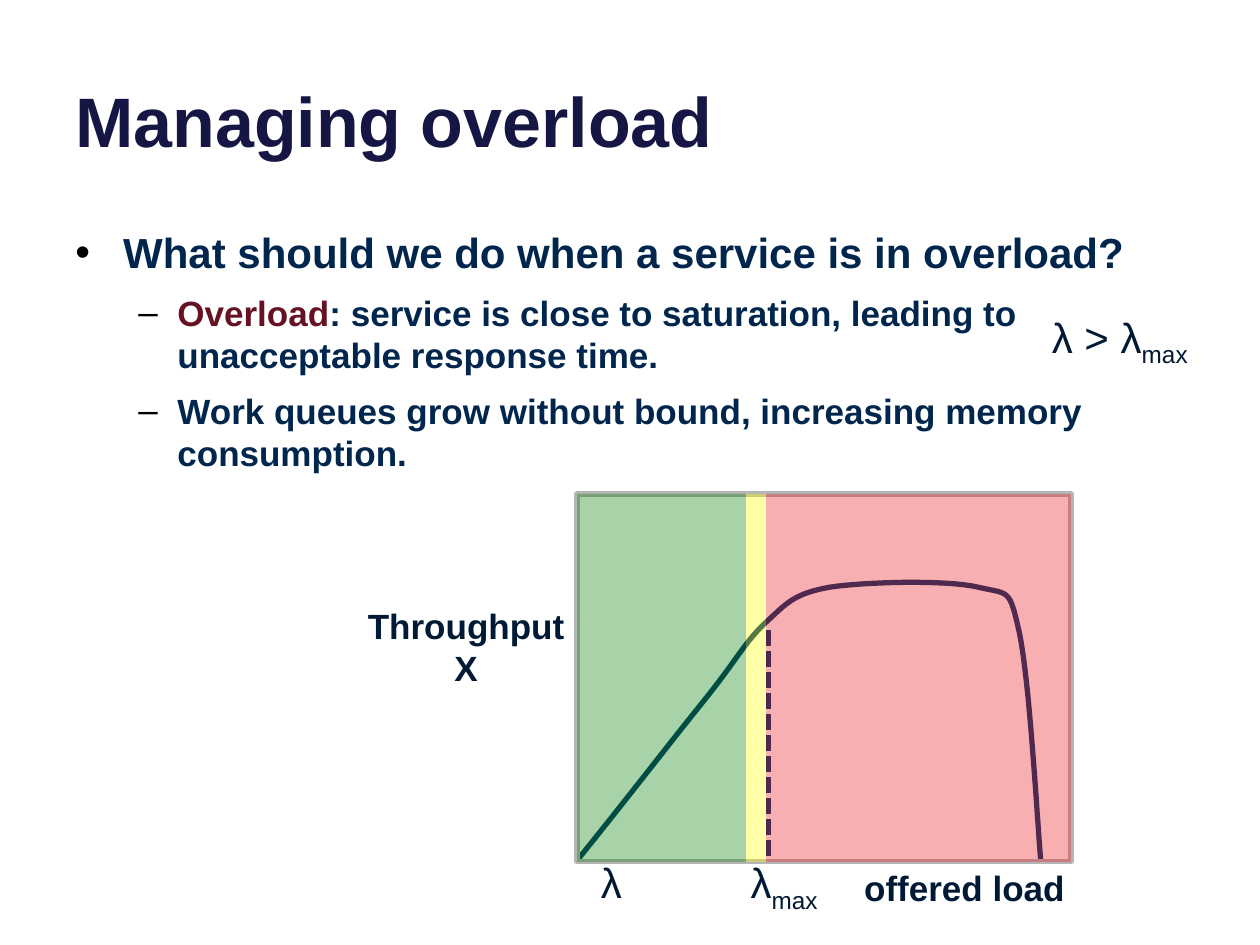
"""Build the slide on managing overload with its throughput curve."""
from dataclasses import dataclass
from typing import NamedTuple

from lxml.etree import SubElement
from pptx import Presentation
from pptx.dml.color import RGBColor
from pptx.enum.dml import MSO_LINE
from pptx.enum.shapes import MSO_CONNECTOR, MSO_SHAPE
from pptx.enum.text import MSO_ANCHOR as Anchor, MSO_AUTO_SIZE as AutoSize, PP_ALIGN as Align
from pptx.oxml.ns import qn
from pptx.util import Inches, Pt


@dataclass(frozen=True)
class Theme:
    font: str = "Arial"
    title: str = "161645"
    body: str = "00264D"
    accent: str = "651222"
    label: str = "001934"
    bullet: str = "000000"
    curve: str = "003367"
    frame: str = "B5B5B5"
    normal: str = "008000"
    limit: str = "FFFF00"
    overload: str = "E8161F"
    zone_alpha: int = 34
    title_size: int = 40
    large: int = 24
    small: int = 20
    line: int = 3


class Box(NamedTuple):
    left: float
    top: float
    width: float
    height: float


class Span(NamedTuple):
    text: str
    color: str
    subscript: bool = False


class Bullet(NamedTuple):
    mark: str
    margin: float
    hanging: float
    before: int


class Para(NamedTuple):
    spans: list[Span]
    size: int
    bullet: Bullet | None = None


class Zone(NamedTuple):
    left: float
    right: float
    color: str


THEME = Theme()
PLOT = Box(4.58, 3.92, 3.92, 2.92)
NORMAL_END, LIMIT_END = 5.92, 6.08
TOPIC = Bullet("•", 0.38, 0.38, 9)
DETAIL = Bullet("–", 0.81, 0.31, 8)
CURVE = [
    (4.58, 6.83), (4.96, 6.36), (5.33, 5.88), (5.58, 5.57),
    (5.84, 5.25), (5.92, 5.08), (6.09, 4.93),
    (6.25, 4.78), (6.31, 4.71), (6.59, 4.66),
    (6.86, 4.62), (7.5, 4.6), (7.76, 4.66),
    (8.01, 4.72), (8.01, 4.66), (8.09, 5.02),
    (8.17, 5.39), (8.23, 6.47), (8.26, 6.83),
]
ZONES = [
    Zone(LIMIT_END, PLOT.left + PLOT.width, THEME.overload),
    Zone(PLOT.left, NORMAL_END, THEME.normal),
    Zone(NORMAL_END, LIMIT_END, THEME.limit),
]


def rgb(color: str) -> RGBColor:
    """Turn a hex string into a colour."""
    return RGBColor.from_string(color)


def set_bullet(paragraph, bullet: Bullet) -> None:
    """Give a paragraph its bullet, hanging indent and space before."""
    paragraph.space_before = Pt(bullet.before)
    props = paragraph._p.get_or_add_pPr()
    props.set("marL", str(Inches(bullet.margin)))
    props.set("indent", str(-Inches(bullet.hanging)))
    color = SubElement(props, qn("a:buClr"))
    SubElement(color, qn("a:srgbClr"), val=THEME.bullet)
    SubElement(props, qn("a:buFont"), typeface=THEME.font)
    SubElement(props, qn("a:buChar"), char=bullet.mark)


def add_text(slide, box: Box, paras: list[Para], *, bold: bool = False, wrap: bool = False,
             align: Align = Align.LEFT, anchor: Anchor = Anchor.TOP) -> None:
    """Add a text box with formatted paragraphs."""
    frame = slide.shapes.add_textbox(*map(Inches, box)).text_frame
    frame.word_wrap = wrap
    frame.auto_size = AutoSize.NONE if wrap else AutoSize.SHAPE_TO_FIT_TEXT
    frame.vertical_anchor = anchor
    for index, para in enumerate(paras):
        paragraph = frame.add_paragraph() if index else frame.paragraphs[0]
        paragraph.alignment = align
        if para.bullet:
            set_bullet(paragraph, para.bullet)
        for span in para.spans:
            run = paragraph.add_run()
            run.text = span.text
            run.font.name = THEME.font
            run.font.size = Pt(para.size)
            run.font.bold = bold
            run.font.color.rgb = rgb(span.color)
            if span.subscript:
                run._r.get_or_add_rPr().set("baseline", "-25000")


def add_label(slide, box: Box, *lines: str) -> None:
    """Add a bold centred axis label."""
    paras = [Para([Span(line, THEME.label)], THEME.small) for line in lines]
    add_text(slide, box, paras, bold=True, align=Align.CENTER)


def add_symbol(slide, box: Box, symbol: str, subscript: str = "") -> None:
    """Add a load symbol with an optional subscript."""
    spans = [Span(symbol, THEME.label)]
    if subscript:
        spans.append(Span(subscript, THEME.label, True))
    add_text(slide, box, [Para(spans, THEME.large)])


def bezier_points(nodes: list[tuple[float, float]], steps: int = 16) -> list[tuple[float, float]]:
    """Sample a chain of cubic curves that share their end nodes."""
    points = [nodes[0]]
    for start in range(0, len(nodes) - 1, 3):
        segment = nodes[start:start + 4]
        for step in range(1, steps + 1):
            t = step / steps
            weights = ((1 - t) ** 3, 3 * t * (1 - t) ** 2, 3 * t * t * (1 - t), t ** 3)
            points.append(tuple(sum(w * node[axis] for w, node in zip(weights, segment))
                                for axis in (0, 1)))
    return points


def add_curve(slide, nodes: list[tuple[float, float]]) -> None:
    """Draw the smooth throughput curve."""
    first, *rest = [(Inches(x), Inches(y)) for x, y in bezier_points(nodes)]
    builder = slide.shapes.build_freeform(*first)
    builder.add_line_segments(rest, close=False)
    curve = builder.convert_to_shape()
    curve.shadow.inherit = False
    curve.fill.background()
    curve.line.color.rgb = rgb(THEME.curve)
    curve.line.width = Pt(THEME.line)


def add_rect(slide, box: Box, *, fill: str = "", line: str = "") -> None:
    """Draw a rectangle with a translucent fill or an outline."""
    rect = slide.shapes.add_shape(MSO_SHAPE.RECTANGLE, *map(Inches, box))
    rect.shadow.inherit = False
    if fill:
        rect.fill.solid()
        rect.fill.fore_color.rgb = rgb(fill)
        color = rect._element.spPr.find(qn("a:solidFill")).find(qn("a:srgbClr"))
        SubElement(color, qn("a:alpha"), val=str(THEME.zone_alpha * 1000))
    else:
        rect.fill.background()
    if line:
        rect.line.color.rgb = rgb(line)
        rect.line.width = Pt(THEME.line)
    else:
        rect.line.fill.background()


def add_limit_line(slide, x: float, top: float, bottom: float) -> None:
    """Draw the dashed line at the maximum load."""
    line = slide.shapes.add_connector(MSO_CONNECTOR.STRAIGHT, *map(Inches, (x, top, x, bottom)))
    line.line.color.rgb = rgb(THEME.curve)
    line.line.width = Pt(THEME.line)
    line.line.dash_style = MSO_LINE.SQUARE_DOT
    SubElement(line._element.spPr, qn("a:effectLst"))


def main() -> None:
    """Compose and save the slide."""
    deck = Presentation()
    deck.slide_width, deck.slide_height = Inches(10), Inches(7.5)
    slide = deck.slides.add_slide(deck.slide_layouts[6])
    add_text(slide, Box(0.5, -0.37, 9, 1.7),
             [Para([Span("Managing overload", THEME.title)], THEME.title_size)],
             bold=True, wrap=True, anchor=Anchor.BOTTOM)
    add_text(slide, Box(0.5, 1.75, 9, 4.5), [
        Para([Span("What should we do when a service is in overload?", THEME.body)],
             THEME.large, TOPIC),
        Para([Span("Overload", THEME.accent),
              Span(": service is close to saturation, leading to unacceptable response time.",
                   THEME.body)], THEME.small, DETAIL),
        Para([Span("Work queues grow without bound, increasing memory consumption.",
                   THEME.body)], THEME.small, DETAIL),
    ], bold=True, wrap=True)
    add_symbol(slide, Box(8.25, 2.42, 1.36, 0.5), "λ > λ", "max")
    add_curve(slide, CURVE)
    add_rect(slide, PLOT, line=THEME.frame)
    add_symbol(slide, Box(4.67, 6.75, 0.38, 0.5), "λ")
    add_symbol(slide, Box(5.86, 6.75, 0.81, 0.5), "λ", "max")
    add_limit_line(slide, 6.1, 5, 6.82)
    for zone in ZONES:
        add_rect(slide, Box(zone.left, PLOT.top, zone.right - zone.left, PLOT.height),
                 fill=zone.color)
    add_label(slide, Box(2.81, 4.75, 1.78, 0.77), "Throughput", "X")
    add_label(slide, Box(6.75, 6.83, 1.81, 0.44), "offered load")
    deck.save("out.pptx")


if __name__ == "__main__":
    main()
